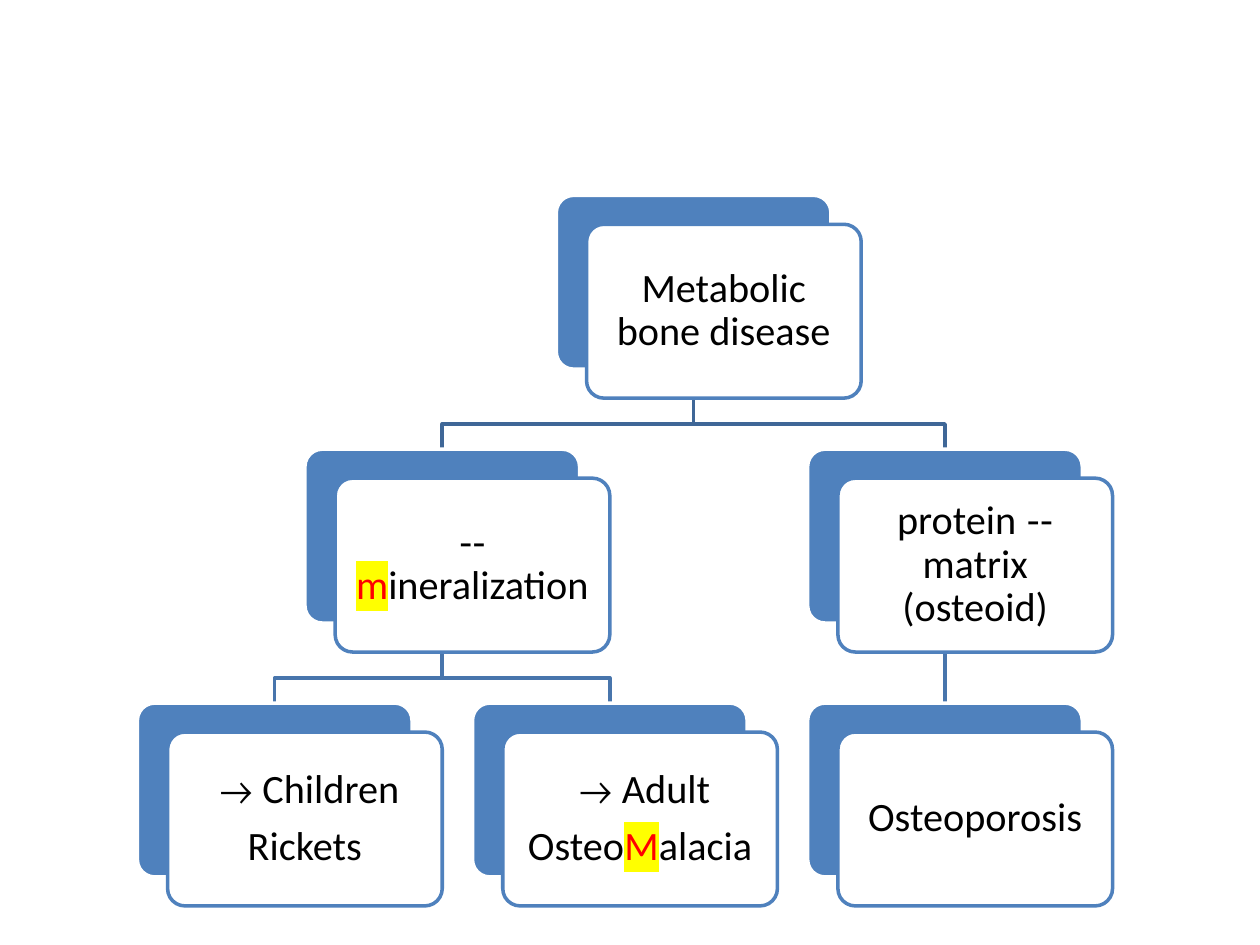
import dataclasses

import pptx
import pptx.dml.color
import pptx.enum.shapes
import pptx.enum.text
import pptx.oxml
import pptx.oxml.ns
import pptx.util
from pptx.util import Inches

CARD_WIDTH, CARD_HEIGHT = Inches(2.18), Inches(1.38)
OFFSET_X, OFFSET_Y = Inches(0.24), Inches(0.23)
COLUMN_PITCH, LEVEL_PITCH = Inches(2.66), Inches(2.015)
BRANCH_RISE = Inches(0.2)
LABEL_MARGIN = Inches(0.1)
BLUE, WHITE, BLACK, RED, YELLOW = "4F81BD", "FFFFFF", "000000", "FF0000", "FFFF00"
BRANCH_COLORS = ["3F6797", "4875AC"]


@dataclasses.dataclass
class Node:
    """A card: paragraphs of runs, where a run marked True is highlighted."""
    paragraphs: list
    children: list = dataclasses.field(default_factory=list)
    left: int = 0
    top: int = 0
    level: int = 0

    @property
    def center(self):
        return self.left + CARD_WIDTH // 2


def rgb(color):
    return pptx.dml.color.RGBColor.from_string(color)


def add_xml(parent, tag, **attributes):
    child = pptx.oxml.parse_xml(f"<a:{tag} {pptx.oxml.ns.nsdecls('a')}/>")
    for name, value in attributes.items():
        child.set(name, value)
    parent.append(child)
    return child


def style_line(line, color):
    line.color.rgb = rgb(color)
    line.width = pptx.util.Pt(2)


def arrange(node, left, top, level=0):
    """Place leaves in columns and centre parents; return the next free left."""
    node.top, node.level = top + level * LEVEL_PITCH, level
    if not node.children:
        node.left = left
        return left + COLUMN_PITCH
    for child in node.children:
        left = arrange(child, left, top, level + 1)
    node.left = (node.children[0].left + node.children[-1].left) // 2
    return left


def add_branches(slide, node):
    for child in node.children:
        add_branches(slide, child)
        color = BRANCH_COLORS[node.level]
        start = (node.center, node.top + CARD_HEIGHT)
        end = (child.center, child.top)
        if node.center == child.center:
            branch = slide.shapes.add_connector(
                pptx.enum.shapes.MSO_CONNECTOR.STRAIGHT, *start, *end)
            add_xml(branch._element.spPr, "effectLst")
        else:
            bend = child.top - BRANCH_RISE
            outline = slide.shapes.build_freeform(*start)
            outline.add_line_segments(
                [(node.center, bend), (child.center, bend), end], close=False)
            branch = outline.convert_to_shape()
            branch.fill.background()
            branch.shadow.inherit = False
        style_line(branch.line, color)


def add_panel(slide, left, top, fill, line):
    panel = slide.shapes.add_shape(
        pptx.enum.shapes.MSO_SHAPE.ROUNDED_RECTANGLE, left, top, CARD_WIDTH, CARD_HEIGHT)
    panel.adjustments[0] = 0.1
    panel.shadow.inherit = False
    panel.fill.solid()
    panel.fill.fore_color.rgb = rgb(fill)
    style_line(panel.line, line)
    return panel


def add_run(paragraph, text, marked):
    run = paragraph.add_run()
    run.text = text
    run.font.size = pptx.util.Pt(23)
    run.font.name = "Calibri"
    run.font.color.rgb = rgb(RED if marked else BLACK)
    if marked:
        properties = run.font._element
        highlight = add_xml(properties, "highlight")
        add_xml(highlight, "srgbClr", val=YELLOW)
        properties.find(pptx.oxml.ns.qn("a:solidFill")).addnext(highlight)


def write_label(frame, paragraphs):
    frame.word_wrap = True
    frame.vertical_anchor = pptx.enum.text.MSO_ANCHOR.MIDDLE
    frame.margin_left = frame.margin_right = LABEL_MARGIN
    frame.margin_top = frame.margin_bottom = LABEL_MARGIN
    for index, runs in enumerate(paragraphs):
        paragraph = frame.add_paragraph() if index else frame.paragraphs[0]
        paragraph.alignment = pptx.enum.text.PP_ALIGN.CENTER
        paragraph.line_spacing = 0.9
        paragraph.space_after = pptx.util.Pt(8)
        paragraph._p.get_or_add_pPr().set("rtl", "1")
        for text, marked in runs:
            add_run(paragraph, text, marked)


def add_cards(slide, node):
    add_panel(slide, node.left, node.top, BLUE, WHITE)
    front = add_panel(slide, node.left + OFFSET_X, node.top + OFFSET_Y, WHITE, BLUE)
    write_label(front.text_frame, node.paragraphs)
    for child in node.children:
        add_cards(slide, child)


def add_hierarchy(slide, root, left, top):
    arrange(root, left, top)
    add_branches(slide, root)
    add_cards(slide, root)


def main():
    rickets = Node([[("Children → ", False)], [("Rickets", False)]])
    osteomalacia = Node([[("Adult → ", False)],
                         [("Osteo", False), ("M", True), ("alacia", False)]])
    osteoporosis = Node([[("Osteoporosis", False)]])
    mineralization = Node([[("-- ", False), ("m", True), ("ineralization", False)]],
                          [rickets, osteomalacia])
    matrix = Node([[("-- protein matrix (osteoid)", False)]], [osteoporosis])
    bone_disease = Node([[("Metabolic bone disease", False)]], [mineralization, matrix])

    presentation = pptx.Presentation()
    presentation.slide_width, presentation.slide_height = Inches(10), Inches(7.5)
    slide = presentation.slides.add_slide(presentation.slide_layouts[6])
    add_hierarchy(slide, bone_disease, Inches(1.09), Inches(1.55))
    presentation.save("out.pptx")


if __name__ == "__main__":
    main()
